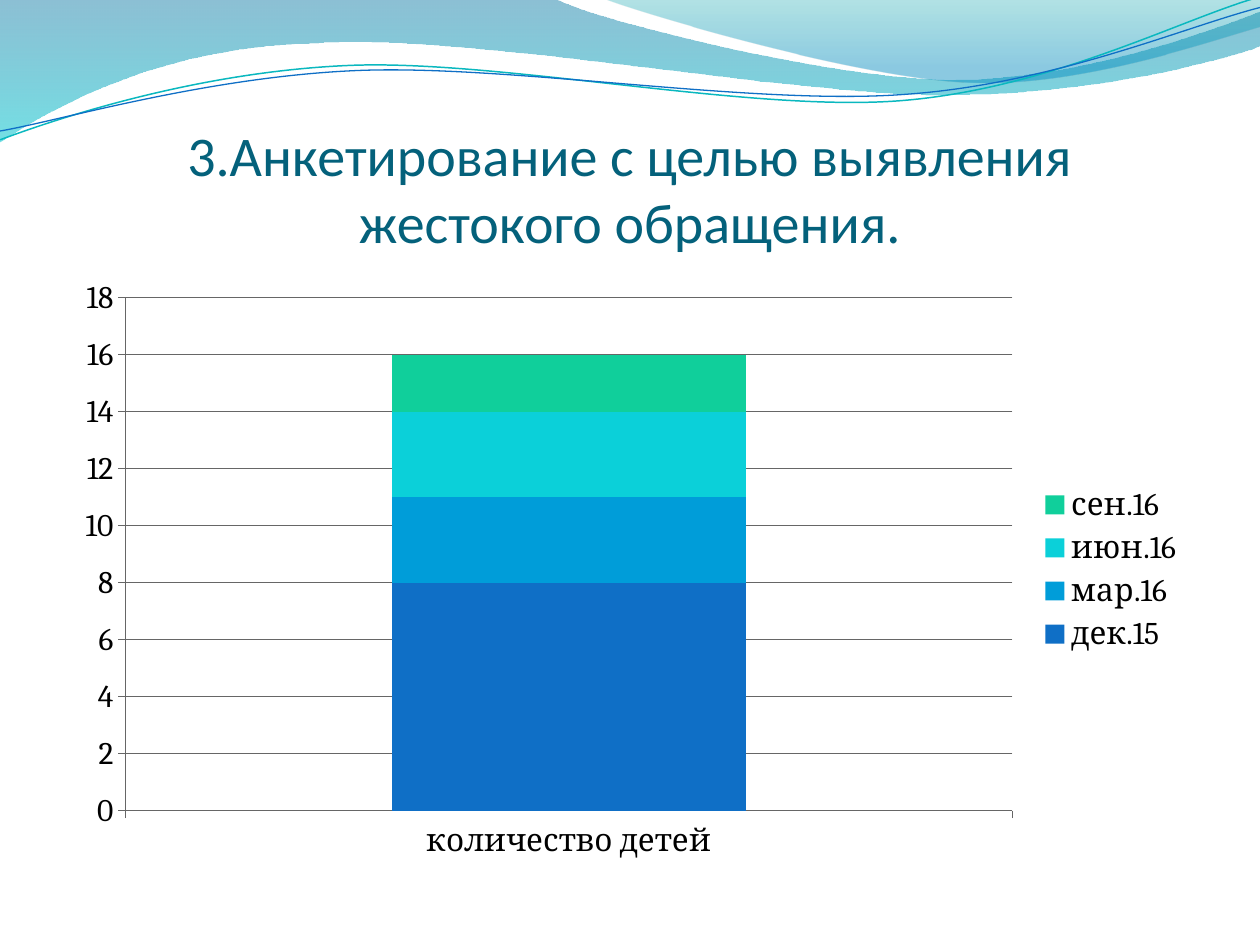
"""Builds the survey slide: a wave header, a title and a stacked column chart."""
from math import cos, radians, sin

from lxml import etree
from pptx import Presentation
from pptx.chart.data import CategoryChartData
from pptx.dml.color import RGBColor
from pptx.enum.chart import XL_CHART_TYPE, XL_LEGEND_POSITION, XL_TICK_MARK
from pptx.enum.text import MSO_ANCHOR, PP_ALIGN
from pptx.oxml.ns import qn
from pptx.util import Inches, Pt

STACKED = XL_CHART_TYPE.COLUMN_STACKED
LEGEND_RIGHT = XL_LEGEND_POSITION.RIGHT
TICK_OUTSIDE = XL_TICK_MARK.OUTSIDE
BOTTOM = MSO_ANCHOR.BOTTOM
CENTER = PP_ALIGN.CENTER

BLACK = RGBColor(0x00, 0x00, 0x00)
GRID_GRAY = RGBColor(0x66, 0x66, 0x66)
TITLE_TEAL = RGBColor(0x04, 0x61, 0x7B)
BLUE = RGBColor(0x0F, 0x6F, 0xC6)
SKY = RGBColor(0x00, 0x9D, 0xD9)
CYAN = RGBColor(0x0B, 0xD0, 0xD9)
GREEN = RGBColor(0x10, 0xCF, 0x9B)
LINE_TEAL = RGBColor(0x0A, 0xB8, 0xBF)
DEEP_BLUE = RGBColor(0x00, 0x74, 0xA1)
AQUA = RGBColor(0x00, 0xC6, 0xCF)
DEEP_TEAL = RGBColor(0x00, 0xA1, 0xA9)
AZURE = RGBColor(0x00, 0x8B, 0xBF)

COLUMNS = 10
FINENESS = 1000
LINE_TURN = -2.7

BROAD_WAVE = [
    (0, 0), (4.4, -0.01),
    (4.76, 0.17, 6.64, 0.63, 7.58, 0.63), (8.53, 0.63, 9.58, 0.26, 10, 0.09),
    (10.01, 0.36),
    (9.83, 0.44, 8.7, 0.76, 7.46, 0.75), (6.22, 0.75, 3.82, 0.28, 2.57, 0.34),
    (1.29, 0.36, 0.46, 0.83, -0.01, 1.13),
]
RIGHT_WAVE = [
    (4.79, -0.01),
    (5.09, 0.11, 6.82, 0.62, 7.69, 0.65), (8.56, 0.69, 9.61, 0.32, 10, 0.21),
    (10, 0),
]
TEAL_LINE = [
    (0, 1.11),
    (0.48, 0.93, 1.58, 0.57, 2.77, 0.52), (3.95, 0.47, 5.93, 0.89, 7.13, 0.8),
    (8.33, 0.71, 9.38, 0.15, 9.98, -0.02),
]
BLUE_LINE = [
    (0, 1.04),
    (0.47, 0.96, 1.64, 0.61, 2.83, 0.56), (4.03, 0.51, 5.97, 0.84, 7.17, 0.75),
    (8.36, 0.67, 9.41, 0.21, 10, 0.06),
]
SURVEYS = [("дек.15", 8, BLUE), ("мар.16", 3, SKY),
           ("июн.16", 3, CYAN), ("сен.16", 2, GREEN)]


def pairs(step):
    """Split a flat step into its points."""
    return list(zip(step[::2], step[1::2]))


def turned(outline, center, degrees):
    """Rotate every point of an outline clockwise around a center."""
    c, s = cos(radians(degrees)), sin(radians(degrees))
    cx, cy = center
    return [[(cx + (x - cx) * c - (y - cy) * s, cy + (x - cx) * s + (y - cy) * c)
             for x, y in step] for step in outline]


class SlideBuilder:
    """Holds the style, the grid and the current slide."""

    title_font = "Calibri"
    chart_font = "Cambria"

    def __init__(self, presentation):
        """Add a title-only slide and measure its grid."""
        self.slide = presentation.slides.add_slide(presentation.slide_layouts[5])
        self.unit = presentation.slide_width // COLUMNS

    def grid(self, *cells):
        """Convert columns and rows to lengths."""
        return [round(cell * self.unit) for cell in cells]

    def outline(self, steps, closed):
        """Draw a freeform of straight and cubic steps."""
        fine = [[(round(x * FINENESS), round(y * FINENESS)) for x, y in step]
                for step in steps]
        anchors = [step[-1] for step in fine]
        builder = self.slide.shapes.build_freeform(
            *anchors[0], scale=self.unit / FINENESS)
        builder.add_line_segments(anchors[1:], close=closed)
        shape = builder.convert_to_shape()
        shape.shadow.inherit = False
        left = min(x for x, _ in anchors)
        top = min(y for _, y in anchors)
        segments = list(shape._element.iter(qn("a:lnTo")))
        for segment, step in zip(segments, fine[1:]):
            if len(step) == 3:
                cubic = etree.Element(qn("a:cubicBezTo"))
                for x, y in step:
                    etree.SubElement(cubic, qn("a:pt"), x=str(x - left), y=str(y - top))
                segment.getparent().replace(segment, cubic)
        return shape

    def wave(self, outline, stops):
        """Draw a wave with a downward translucent gradient."""
        shape = self.outline([pairs(step) for step in outline], True)
        shape.line.fill.background()
        shape.fill.gradient()
        shape.fill.gradient_angle = 270
        for stop, (position, color, _) in zip(shape.fill.gradient_stops, stops):
            stop.position = position
            stop.color.rgb = color
        for tag, (_, _, opacity) in zip(shape._element.spPr.iter(qn("a:srgbClr")), stops):
            etree.SubElement(tag, qn("a:alpha"), val=str(opacity * 1000))

    def curve(self, outline, center, color, weight):
        """Draw a thin curve as a slightly rotated open outline."""
        steps = [pairs(step) for step in outline]
        shape = self.outline(turned(steps, center, -LINE_TURN), False)
        shape.rotation = LINE_TURN
        shape.fill.background()
        shape.line.color.rgb = color
        shape.line.width = Pt(weight)

    def title(self, text, *cells):
        """Place and format the title above the header waves."""
        title = self.slide.shapes.title
        title._element.getparent().append(title._element)
        title.left, title.top, title.width, title.height = self.grid(*cells)
        frame = title.text_frame
        frame.text = text
        frame.word_wrap = True
        frame.vertical_anchor = BOTTOM
        frame.margin_left = frame.margin_right = frame.margin_bottom = 0
        frame.margin_top = Inches(0.05)
        heading = frame.paragraphs[0]
        heading.alignment = CENTER
        font = heading.runs[0].font
        font.name, font.size = self.title_font, Pt(32)
        font.color.rgb = TITLE_TEAL

    def stacked_columns(self, category, surveys, *cells):
        """Add the stacked chart with a legend on the right."""
        data = CategoryChartData()
        data.categories = [category]
        for name, count, _ in surveys:
            data.add_series(name, [count])
        chart = self.slide.shapes.add_chart(STACKED, *self.grid(*cells), data).chart
        chart.has_title = False
        chart.font.name, chart.font.size = self.chart_font, Pt(18)
        chart.font.color.rgb = BLACK
        chart.has_legend = True
        chart.legend.position = LEGEND_RIGHT
        chart.legend.include_in_layout = False
        plot = chart.plots[0]
        plot.gap_width, plot.overlap = 150, 100
        plot.vary_by_categories = False
        for series, (_, _, color) in zip(plot.series, surveys):
            series.format.fill.solid()
            series.format.fill.fore_color.rgb = color
        for axis in (chart.category_axis, chart.value_axis):
            axis.major_tick_mark = TICK_OUTSIDE
            axis.format.line.color.rgb = GRID_GRAY
        counts = chart.value_axis
        counts.minimum_scale, counts.maximum_scale, counts.major_unit = 0, 18, 2
        counts.has_major_gridlines = True
        gridline = counts.major_gridlines.format.line
        gridline.color.rgb, gridline.width = GRID_GRAY, Pt(1)


def main():
    """Build and save the slide."""
    presentation = Presentation()
    presentation.slide_width, presentation.slide_height = Inches(10), Inches(7.5)
    builder = SlideBuilder(presentation)
    builder.wave(BROAD_WAVE, [(0, DEEP_BLUE, 45), (1, AQUA, 55)])
    builder.wave(RIGHT_WAVE, [(0, DEEP_TEAL, 30), (0.8, AZURE, 45)])
    builder.curve(TEAL_LINE, (4.99, 0.58), LINE_TEAL, 0.85)
    builder.curve(BLUE_LINE, (5, 0.59), BLUE, 0.75)
    builder.title("3.Анкетирование с целью выявления жестокого обращения.",
                  0.5, 0.77, 9, 1.25)
    builder.stacked_columns("количество детей", SURVEYS, 0.5, 2.12, 9, 4.8)
    presentation.save("out.pptx")


if __name__ == "__main__":
    main()
